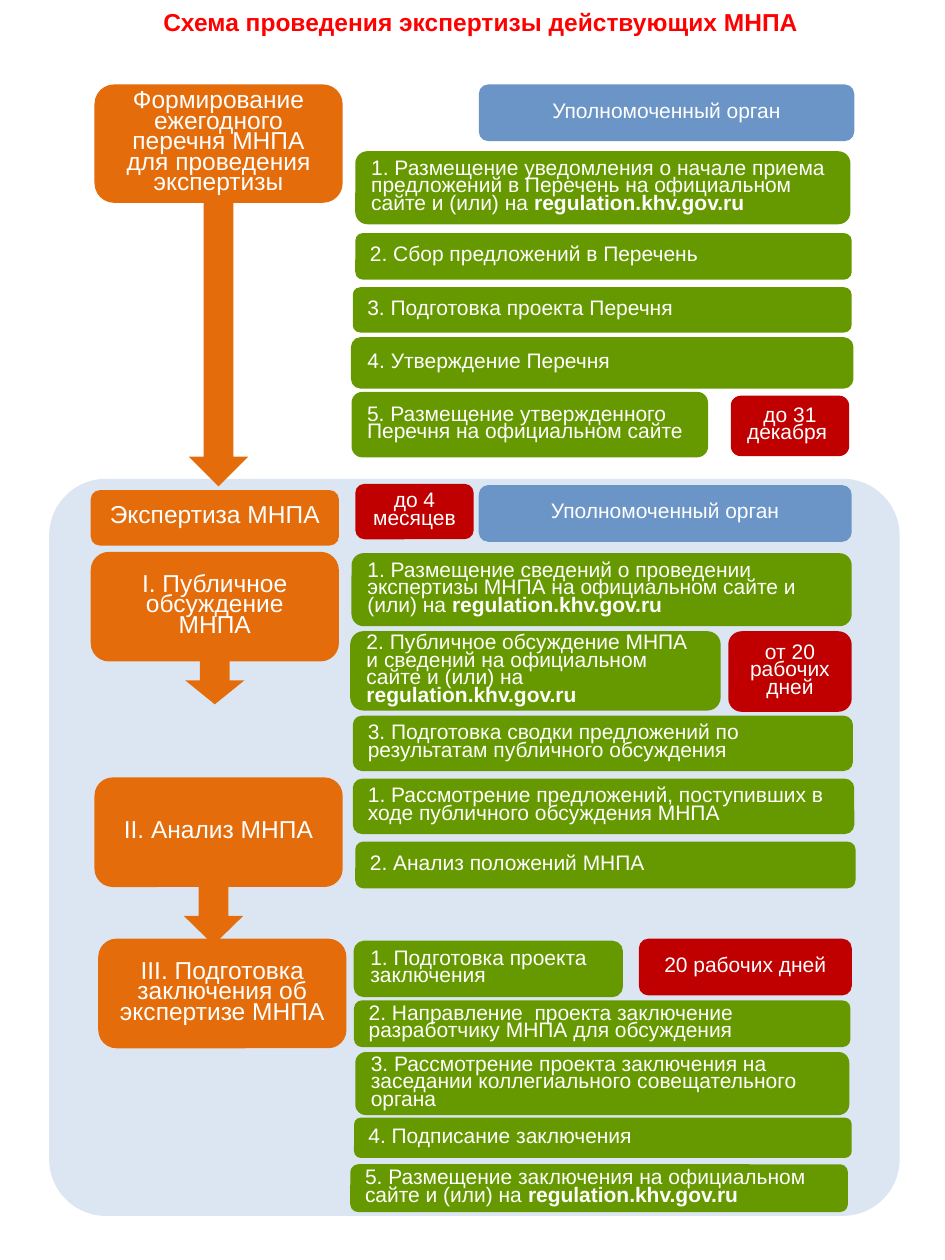
from pptx import Presentation
from pptx.dml.color import RGBColor
from pptx.enum.shapes import MSO_SHAPE
from pptx.enum.text import MSO_ANCHOR, PP_ALIGN
from pptx.util import Inches, Pt

WIDTH, HEIGHT = Inches(7.5), Inches(10)
COLUMNS, ROWS = 750, 1000
ORANGE, GREEN, RED, BLUE, PANEL = "E46C0A", "669900", "C00000", "6B95C7", "DCE6F2"
WHITE, TITLE_RED = "FFFFFF", "FF0000"
SITE = "regulation.khv.gov.ru"
AUTHORITY = "Уполномоченный орган"
STAGE_WIDTH, ARROW_WIDTH = 197, 47

STAGES = [
    (75, 67, 94, "Формирование ежегодного перечня МНПА для проведения экспертизы"),
    (72, 389, 44, "Экспертиза МНПА"),
    (72, 438, 87, "I. Публичное обсуждение МНПА"),
    (75, 617, 87, "II. Анализ МНПА"),
    (78, 745, 87, "III. Подготовка заключения об экспертизе МНПА"),
]
ARROWS = [(150, 161, 225), (147, 521, 38), (146, 704, 46)]
AUTHORITIES = [(380, 67, 298, 45), (380, 385, 296, 45)]
DEADLINES = [
    ((580, 314, 94, 48), "до 31 декабря "),
    ((282, 384, 94, 44), "до 4 месяцев"),
    ((578, 501, 98, 64), "от 20 рабочих дней"),
    ((507, 745, 169, 45), "20 рабочих дней"),
]
LIST_PREPARATION = [
    ((282, 120, 393, 58), "Размещение уведомления о начале приема предложений в Перечень "
     "на официальном сайте и (или) на ", SITE),
    ((282, 185, 394, 37), "Сбор предложений в Перечень"),
    ((280, 228, 396, 36), "Подготовка проекта Перечня"),
    ((280, 269, 396, 38), "Утверждение Перечня"),
    ((279, 311, 283, 52), "Размещение утвержденного Перечня на официальном сайте"),
]
PUBLIC_DISCUSSION = [
    ((279, 439, 397, 58), "Размещение сведений о проведении экспертизы МНПА "
     "на официальном сайте и (или) на ", SITE),
    ((278, 501, 294, 63), "Публичное обсуждение МНПА и сведений "
     "на официальном сайте и (или) на ", SITE),
    ((280, 568, 397, 44), "Подготовка сводки предложений по результатам публичного обсуждения"),
]
ANALYSIS = [
    ((280, 618, 398, 44), "Рассмотрение предложений, поступивших в ходе публичного обсуждения МНПА"),
    ((282, 668, 397, 37), "Анализ положений МНПА"),
]
CONCLUSION = [
    ((282, 748, 211, 42), "Подготовка проекта заключения"),
    ((281, 794, 394, 37), "Направление  проекта заключение разработчику МНПА для обсуждения"),
    ((282, 835, 392, 50), "Рассмотрение проекта заключения на заседании "
     "коллегиального совещательного органа"),
    ((281, 887, 395, 32), "Подписание заключения"),
    ((278, 924, 395, 38), "Размещение заключения на официальном сайте и (или) на ", SITE),
]
OUTLINED = {"Утверждение Перечня", "Подготовка проекта заключения"}


def color(code):
    """Turn a hex string into a colour."""
    return RGBColor.from_string(code)


def place(column, row, columns, rows):
    """Turn grid columns and rows into slide lengths."""
    return (int(WIDTH * column / COLUMNS), int(HEIGHT * row / ROWS),
            int(WIDTH * columns / COLUMNS), int(HEIGHT * rows / ROWS))


def write(frame, parts, size, align, ink=WHITE):
    """Write one tight paragraph from (text, bold) parts."""
    frame.word_wrap = True
    paragraph = frame.paragraphs[0]
    paragraph.alignment = align
    paragraph.line_spacing = 0.7
    for text, bold in parts:
        run = paragraph.add_run()
        run.text = text
        run.font.name = "Arial"
        run.font.size = Pt(size)
        run.font.bold = bold
        run.font.color.rgb = color(ink)


def add_block(slide, cell, fill, preset=MSO_SHAPE.ROUNDED_RECTANGLE):
    """Add a flat filled shape without an outline."""
    block = slide.shapes.add_shape(preset, *place(*cell))
    block.shadow.inherit = False
    block.fill.solid()
    block.fill.fore_color.rgb = color(fill)
    block.line.fill.background()
    return block


def add_label(slide, cell, fill, parts, size=12, align=PP_ALIGN.CENTER):
    """Add a rounded block with text in its middle."""
    label = add_block(slide, cell, fill)
    label.text_frame.vertical_anchor = MSO_ANCHOR.MIDDLE
    write(label.text_frame, parts, size, align)
    return label


def add_steps(slide, steps):
    """Add the numbered green steps of one stage."""
    for number, (cell, action, *site) in enumerate(steps, 1):
        parts = [(f"{number}. {action}", False)] + [(address, True) for address in site]
        step = add_label(slide, cell, GREEN, parts, align=PP_ALIGN.LEFT)
        if action in OUTLINED:
            step.line.color.rgb = color(GREEN)
            step.line.width = Pt(2)


def add_title(slide):
    """Add the heading of the scheme."""
    title = slide.shapes.add_textbox(*place(44, 7, 675, 27))
    write(title.text_frame, [("Схема проведения экспертизы действующих МНПА", True)],
          14, PP_ALIGN.CENTER, TITLE_RED)


def main():
    """Build the scheme and save it."""
    deck = Presentation()
    deck.slide_width, deck.slide_height = WIDTH, HEIGHT
    slide = deck.slides.add_slide(deck.slide_layouts[6])

    panel = add_block(slide, (39, 380, 675, 585), PANEL)
    panel.adjustments[0] = 0.077
    add_title(slide)
    for column, row, rows, stage in STAGES:
        add_label(slide, (column, row, STAGE_WIDTH, rows), ORANGE, [(stage, False)], 14)
    for column, row, rows in ARROWS:
        add_block(slide, (column, row, ARROW_WIDTH, rows), ORANGE, MSO_SHAPE.DOWN_ARROW)
    for cell in AUTHORITIES:
        add_label(slide, cell, BLUE, [(AUTHORITY, False)])
    for steps in (LIST_PREPARATION, PUBLIC_DISCUSSION, ANALYSIS, CONCLUSION):
        add_steps(slide, steps)
    for cell, deadline in DEADLINES:
        add_label(slide, cell, RED, [(deadline, False)])

    deck.save("out.pptx")


if __name__ == "__main__":
    main()
